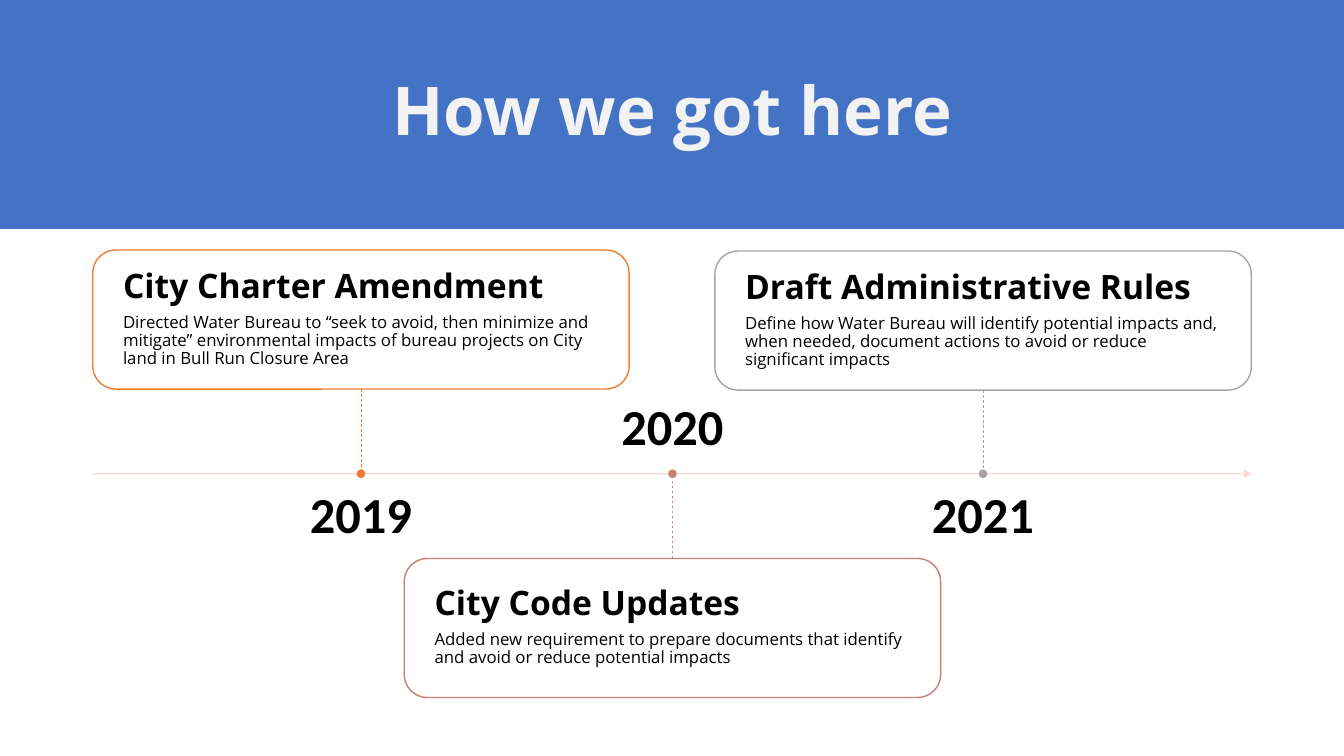
from lxml.etree import SubElement
from pptx import Presentation
from pptx.dml.color import RGBColor
from pptx.enum.dml import MSO_LINE
from pptx.enum.shapes import MSO_CONNECTOR, MSO_SHAPE
from pptx.enum.text import MSO_ANCHOR, PP_ALIGN
from pptx.oxml.ns import qn
from pptx.util import Inches, Pt

AXIS_Y = 4.7
CARD_W, CARD_H = 5.32, 1.38
DOT = 0.07

MILESTONES = [
    ("2019", 3.58, 2.48, "ED7D31", "City Charter Amendment",
     "Directed Water Bureau to “seek to avoid, then minimize and mitigate” "
     "environmental impacts of bureau projects on City land in Bull Run Closure Area"),
    ("2020", 6.67, 5.54, "C48170", "City Code Updates",
     "Added new requirement to prepare documents that identify and avoid or "
     "reduce potential impacts"),
    ("2021", 9.75, 2.49, "A5A5A5", "Draft Administrative Rules",
     "Define how Water Bureau will identify potential impacts and, when needed, "
     "document actions to avoid or reduce significant impacts"),
]


def rgb(value):
    return RGBColor.from_string(value)


def set_alpha(fill_parent, percent):
    color = fill_parent.find(qn("a:solidFill"))[0]
    SubElement(color, qn("a:alpha")).set("val", str(percent * 1000))


class TimelineSlide:
    heading_font = "Open Sans"
    year_font = "Calibri"
    ink = "000000"

    def __init__(self, slide):
        self.slide = slide
        self.shapes = slide.shapes

    def shape(self, kind, x, y, w, h, fill, line=None, alpha=None):
        sp = self.shapes.add_shape(kind, Inches(x), Inches(y), Inches(w), Inches(h))
        sp.shadow.inherit = False
        sp.fill.solid()
        sp.fill.fore_color.rgb = rgb(fill)
        if alpha:
            set_alpha(sp._element.spPr, alpha)
        if line:
            sp.line.color.rgb = rgb(line)
            sp.line.width = Pt(1)
        else:
            sp.line.fill.background()
        return sp

    def line(self, x1, y1, x2, y2, color, width):
        cx = self.shapes.add_connector(
            MSO_CONNECTOR.STRAIGHT, Inches(x1), Inches(y1), Inches(x2), Inches(y2))
        cx.line.color.rgb = rgb(color)
        cx.line.width = Pt(width)
        SubElement(cx._element.spPr, qn("a:effectLst"))
        return cx

    def arrow(self, x1, x2, y, color):
        cx = self.line(x1, y, x2, y, color, 1)
        ln = cx.line._get_or_add_ln()
        set_alpha(ln, 90)
        SubElement(ln, qn("a:tailEnd")).set("type", "triangle")

    def run(self, p, text, size, font, color, bold):
        p.line_spacing = 0.9
        r = p.add_run()
        r.text = text
        r.font.size = Pt(size)
        r.font.name = font
        r.font.bold = bold
        r.font.color.rgb = rgb(color)

    def text_frame(self, x, y, w, h, inset, anchor):
        tf = self.shapes.add_textbox(
            Inches(x), Inches(y), Inches(w), Inches(h)).text_frame
        tf.word_wrap = True
        tf.vertical_anchor = anchor
        tf.margin_left = tf.margin_right = Inches(inset)
        tf.margin_top = tf.margin_bottom = Inches(inset)
        return tf

    def title(self, text):
        banner = self.shape(MSO_SHAPE.RECTANGLE, 0, -0.01, 13.33, 2.28, "4472C4")
        sp = self.shapes.title
        sp._element.addprevious(banner._element)
        sp.left, sp.top = Inches(0.92), Inches(0.4)
        sp.width, sp.height = Inches(11.5), Inches(1.45)
        tf = sp.text_frame
        tf.vertical_anchor = MSO_ANCHOR.MIDDLE
        p = tf.paragraphs[0]
        p.alignment = PP_ALIGN.CENTER
        self.run(p, text, 48, self.heading_font, "F2F2F2", True)

    def year(self, text, x, above):
        y, anchor = (4.03, MSO_ANCHOR.BOTTOM) if above else (4.86, MSO_ANCHOR.TOP)
        tf = self.text_frame(x - 2.34, y, 4.68, 0.5, 0, anchor)
        p = tf.paragraphs[0]
        p.alignment = PP_ALIGN.CENTER
        self.run(p, text, 36, self.year_font, self.ink, True)

    def card(self, x, y, color, heading, detail):
        left = x - CARD_W / 2
        self.shape(MSO_SHAPE.ROUNDED_RECTANGLE, left, y, CARD_W, CARD_H,
                   "FFFFFF", color, 90)
        tf = self.text_frame(left + 0.07, y + 0.06, 5.19, 1.24, 0.23, MSO_ANCHOR.MIDDLE)
        p = tf.paragraphs[0]
        p.space_after = Pt(6)
        self.run(p, heading, 24, self.heading_font, self.ink, True)
        self.run(tf.add_paragraph(), detail, 12, self.heading_font, self.ink, False)

    def milestone(self, year, x, card_y, color, heading, detail):
        below = card_y > AXIS_Y
        self.card(x, card_y, color, heading, detail)
        edge = card_y if below else card_y + CARD_H
        stem = self.line(x, edge, x, AXIS_Y, color, 0.5)
        stem.line.dash_style = MSO_LINE.DASH
        self.year(year, x, above=below)
        self.shape(MSO_SHAPE.OVAL, x - DOT / 2, AXIS_Y - DOT / 2, DOT, DOT, color, color)


def main():
    prs = Presentation()
    prs.slide_width, prs.slide_height = Inches(13.33), Inches(7.5)
    timeline = TimelineSlide(prs.slides.add_slide(prs.slide_layouts[5]))
    timeline.title("How we got here")
    timeline.arrow(0.92, 12.42, AXIS_Y, "F8D7CE")
    for milestone in MILESTONES:
        timeline.milestone(*milestone)
    prs.save("out.pptx")


if __name__ == "__main__":
    main()
